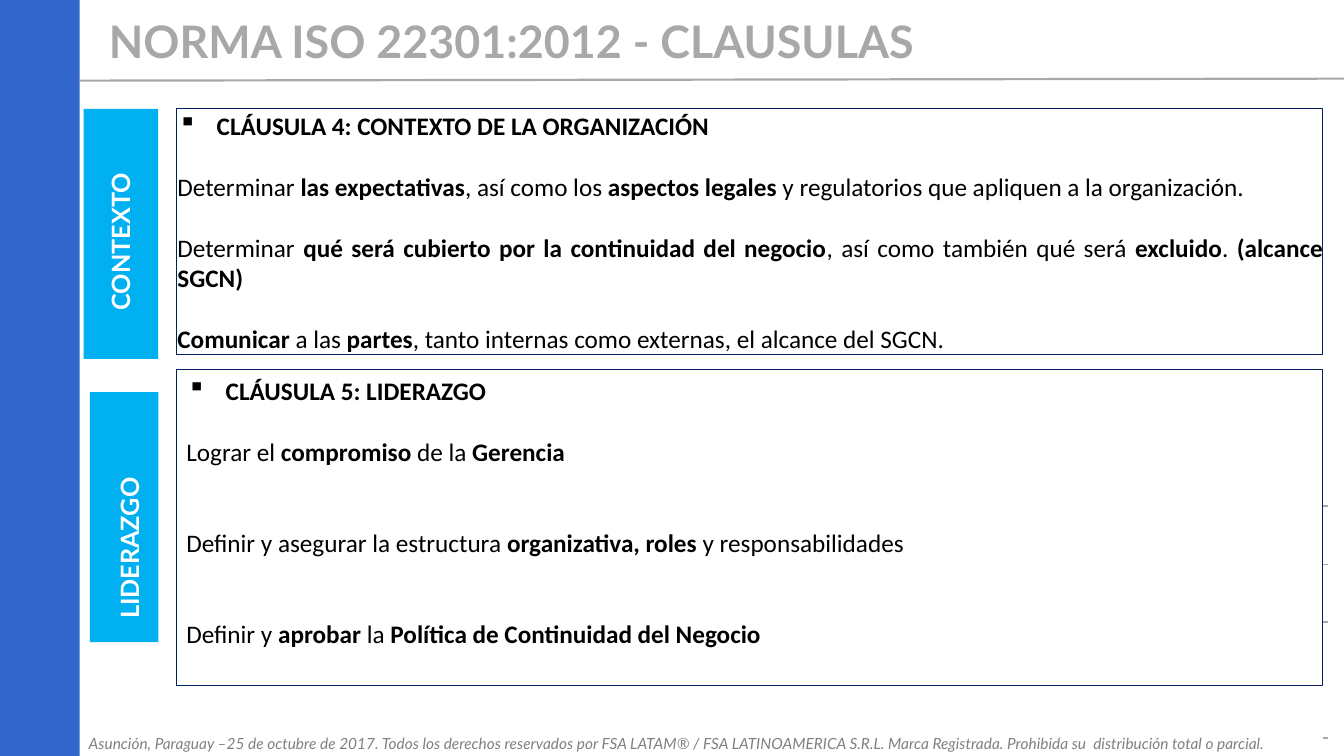
from lxml import etree
from pptx import Presentation
from pptx import util as u
from pptx.dml.color import RGBColor
from pptx.enum import shapes, text
from pptx.oxml.ns import qn

BLUE = RGBColor(0x33, 0x66, 0xCC)
CYAN = RGBColor(0x00, 0xB0, 0xF0)
NAVY = RGBColor(0x00, 0x20, 0x60)
GRAY = RGBColor(0xA7, 0xA8, 0xA7)
FOOTER_GRAY = RGBColor(0x80, 0x80, 0x80)
BLACK = RGBColor(0x00, 0x00, 0x00)
WHITE = RGBColor(0xFF, 0xFF, 0xFF)

CONTEXT_HEADING = "CLÁUSULA 4: CONTEXTO DE LA ORGANIZACIÓN"
CONTEXT_POINTS = [
    "Determinar *las expectativas*, así como los *aspectos legales* y regulatorios que apliquen a la organización.",
    "Determinar *qué será cubierto por la continuidad del negocio*, así como también qué será *excluido*. *(alcance SGCN)*",
    "*Comunicar *a las *partes*, tanto internas como externas, el alcance del SGCN.",
]
LEADERSHIP_HEADING = "CLÁUSULA 5: LIDERAZGO"
LEADERSHIP_POINTS = [
    "Lograr el *compromiso* de la *Gerencia*",
    "Definir y asegurar la estructura *organizativa, roles *y responsabilidades",
    "Definir y *aprobar* la *Política de Continuidad del Negocio*",
]
FOOTER = ("Asunción, Paraguay –25 de octubre de 2017. Todos los derechos reservados por FSA LATAM® / "
          "FSA LATINOAMERICA S.R.L. Marca Registrada. Prohibida su  distribución total o parcial.")


def set_font(font, name, size, color, bold=False, italic=False):
    formats = {"name": name, "size": u.Pt(size), "bold": bold, "italic": italic}
    for key, value in formats.items():
        setattr(font, key, value)
    font.color.rgb = color


def set_frame(frame, left=0, top=0, right=0, bottom=0):
    formats = {
        "margin_left": u.Inches(left), "margin_top": u.Inches(top),
        "margin_right": u.Inches(right), "margin_bottom": u.Inches(bottom),
        "vertical_anchor": text.MSO_ANCHOR.TOP,
        "auto_size": text.MSO_AUTO_SIZE.NONE, "word_wrap": True,
    }
    for key, value in formats.items():
        setattr(frame, key, value)


def add_rect(slide, box, fill=None, line=None, width=0.75):
    rect = slide.shapes.add_shape(shapes.MSO_SHAPE.RECTANGLE, *map(u.Inches, box))
    rect.shadow.inherit = False
    for part, color in ((rect.fill, fill), (rect.line.fill, line)):
        if color is None:
            part.background()
        else:
            part.solid()
            part.fore_color.rgb = color
    if line is not None:
        rect.line.width = u.Pt(width)
    return rect


def add_rule(slide, start, end, width):
    rule = slide.shapes.add_connector(shapes.MSO_CONNECTOR.STRAIGHT, *map(u.Inches, start + end))
    rule.line.color.rgb = GRAY
    rule.line.width = u.Pt(width)
    etree.SubElement(rule._element.spPr, qn("a:effectLst"))


def add_header(slide, box):
    left, top, width, height = box
    add_rule(slide, (left + width, 0.78), (left, 0.8), 1.56)
    title = slide.shapes.title
    places = {"left": left + 0.28, "top": top, "width": 10.7, "height": height}
    for key, value in places.items():
        setattr(title, key, u.Inches(value))
    set_frame(title.text_frame, left=0.01, top=0.01)
    title.text_frame.text = "NORMA ISO 22301:2012 - CLAUSULAS"
    heading = title.text_frame.paragraphs[0]
    heading.alignment = text.PP_ALIGN.LEFT
    set_font(heading.runs[0].font, "Lato", 32, GRAY, bold=True)


def add_clause(slide, box, heading, points, gap, margins, align):
    frame = add_rect(slide, box, line=NAVY).text_frame
    set_frame(frame, **margins)
    bullet = frame.paragraphs[0]
    properties = bullet._p.get_or_add_pPr()
    properties.set("marL", str(u.Inches(0.39)))
    properties.set("indent", str(u.Inches(-0.38)))
    etree.SubElement(properties, qn("a:buChar"), char="▪")
    bullet.alignment = text.PP_ALIGN.LEFT
    run = bullet.add_run()
    run.text = heading
    set_font(run.font, "Calibri", 18, BLACK, bold=True)
    for point in points:
        paragraph = frame.add_paragraph()
        paragraph.alignment = align
        paragraph.space_before = u.Pt(gap)
        for index, piece in enumerate(point.split("*")):
            if piece:
                run = paragraph.add_run()
                run.text = piece
                set_font(run.font, "Calibri", 18, BLACK, bold=index % 2 == 1)


def add_tab(slide, box, label, label_left, label_top):
    add_rect(slide, box, fill=CYAN)
    places = (label_left, label_top, 0.3, 2.25)
    caption = slide.shapes.add_textbox(*map(u.Inches, places))
    set_frame(caption.text_frame, left=0.01, top=0.03)
    caption.text_frame._txBody.bodyPr.set("vert", "vert270")
    run = caption.text_frame.paragraphs[0].add_run()
    run.text = label
    set_font(run.font, "Lato", 18, WHITE, bold=True)


def add_footer(slide, box):
    notice = slide.shapes.add_textbox(*map(u.Inches, box))
    set_frame(notice.text_frame, left=0.01, top=0.03)
    run = notice.text_frame.paragraphs[0].add_run()
    run.text = FOOTER
    set_font(run.font, "Lato", 11, FOOTER_GRAY, italic=True)


def main():
    deck = Presentation()
    deck.slide_width = u.Inches(13.33)
    deck.slide_height = u.Inches(7.5)
    slide = deck.slides.add_slide(deck.slide_layouts[5])

    add_rect(slide, (0, 0, 0.79, 7.5), fill=BLUE)
    add_header(slide, (0.79, 0.13, 12.54, 0.55))
    for tick_top in (5.02, 5.6, 6.17, 7.32):
        add_rule(slide, (13.12, tick_top), (13.17, tick_top), 1.17)
    add_clause(slide, (1.75, 1.08, 11.37, 2.44), CONTEXT_HEADING, CONTEXT_POINTS, 22,
               {"left": 0.01, "top": 0.01}, text.PP_ALIGN.JUSTIFY)
    add_clause(slide, (1.75, 3.67, 11.37, 3.13), LEADERSHIP_HEADING, LEADERSHIP_POINTS, 22,
               {"left": 0.1, "top": 0.05, "right": 0.1, "bottom": 0.05}, text.PP_ALIGN.LEFT)
    clause = slide.shapes[-1].text_frame
    for paragraph in clause.paragraphs[2:]:
        paragraph.space_before = u.Pt(43.5)
    add_tab(slide, (0.83, 1.08, 0.74, 2.48), "CONTEXTO", 1.03, 0.83)
    add_tab(slide, (0.89, 3.89, 0.68, 2.48), "LIDERAZGO", 1.12, 3.89)
    add_footer(slide, (0.87, 7.25, 12.38, 0.21))

    deck.save("out.pptx")


if __name__ == "__main__":
    main()
